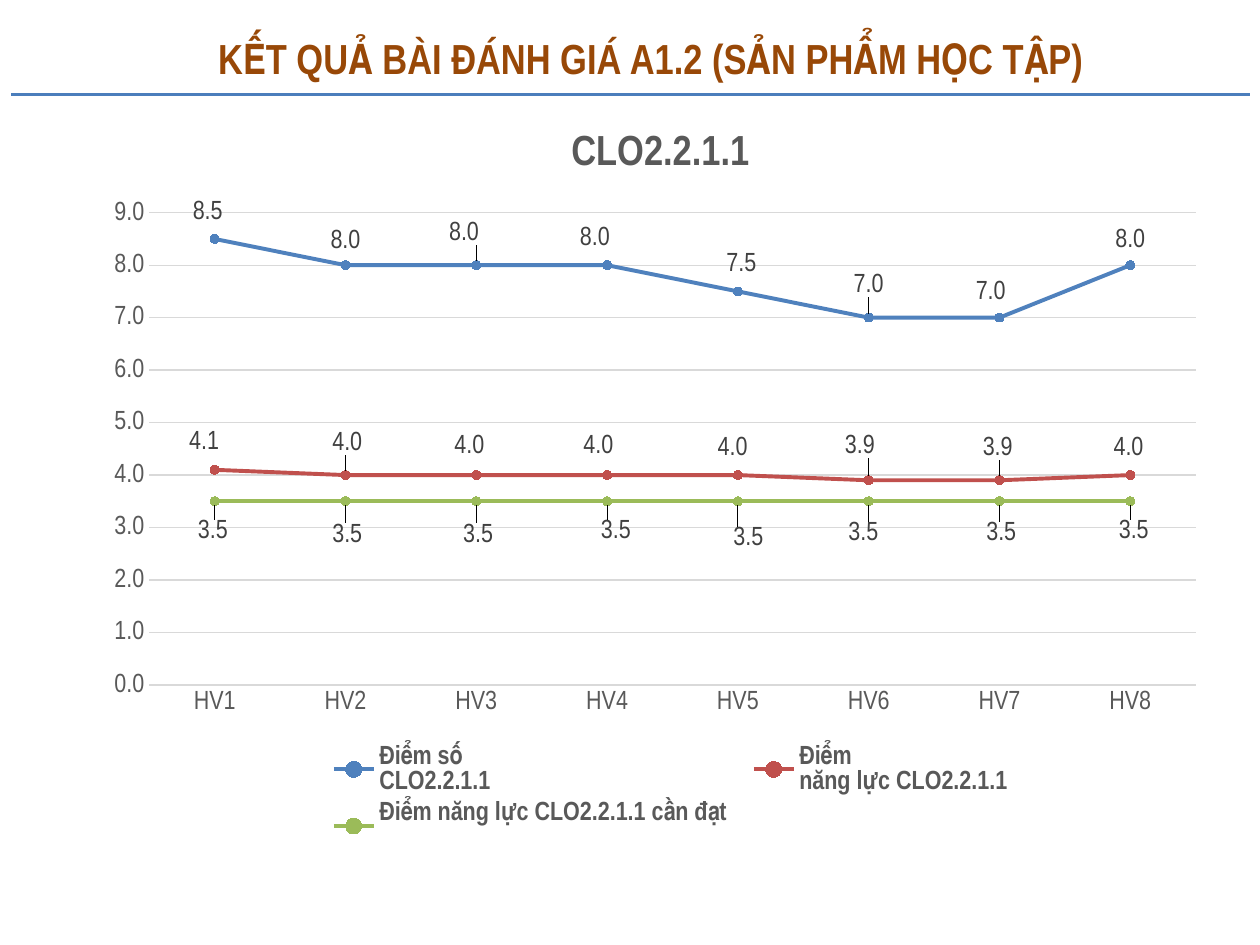
from dataclasses import dataclass

from lxml import etree
from pptx import Presentation
from pptx.chart.data import CategoryChartData
from pptx.dml.color import RGBColor
from pptx.enum import chart as ch, shapes, text
from pptx.oxml.ns import qn
from pptx.util import Pt

FONT = "Arial Narrow"
COLORS = {
    "heading": "984807", "rule": "4B7EBC", "grid": "D9D9D9", "axis": "595959",
    "label": "404040", "score": "4F81BD", "ability": "C0504D", "target": "9BBB59",
}
LEARNERS = [f"HV{n}" for n in range(1, 9)]
CHART_WIDTH, CHART_HEIGHT = 643.7, 419
ABOVE, BELOW = ch.XL_LABEL_POSITION.ABOVE, ch.XL_LABEL_POSITION.BELOW


@dataclass(frozen=True)
class Measure:
    name: str
    color: str
    values: list[float]
    label_side: ch.XL_LABEL_POSITION
    nudges: list[tuple[float, float]]  # label shifts in points


MEASURES = [
    Measure("Điểm số \nCLO2.2.1.1", "score", [8.5, 8, 8, 8, 7.5, 7, 7, 8], ABOVE,
            [(-4, -3), (0, -1), (-7, -6), (-7, -3), (2, -3), (0, -6), (-5, -2), (0, -2)]),
    Measure("Điểm \nnăng lực CLO2.2.1.1", "ability", [4.1, 4, 4, 4, 4, 3.9, 3.9, 4], ABOVE,
            [(-6, -3), (1, -6), (-4, -4), (-5, -4), (-3, -3), (-5, -7), (-1, -6), (-1, -3)]),
    Measure("Điểm năng lực CLO2.2.1.1 cần đạt", "target", [3.5] * 8, BELOW,
            [(-1, 5), (1, 7), (1, 7), (5, 5), (6, 9), (-3, 6), (1, 6), (2, 5)]),
]


def rgb(key: str) -> RGBColor:
    return RGBColor.from_string(COLORS[key])


def style_font(font, size: float, color: str, bold: bool = False) -> None:
    font.name, font.size, font.bold = FONT, Pt(size), bold
    font.color.rgb = rgb(color)


def write(frame, content: str, *, size: float, color: str, bold: bool = False,
          align=text.PP_ALIGN.CENTER) -> None:
    paragraph = frame.paragraphs[0]
    paragraph.alignment = align
    run = paragraph.add_run()
    run.text = content
    style_font(run.font, size, color, bold)


def set_layout(parent, index: int, **values) -> None:
    """Give a chart part a manual layout, in fractions of the chart."""
    for old in parent.findall(qn("c:layout")):
        parent.remove(old)
    layout = etree.Element(qn("c:layout"))
    manual = etree.SubElement(layout, qn("c:manualLayout"))
    for tag, value in values.items():
        etree.SubElement(manual, qn(f"c:{tag}")).set("val", str(value))
    parent.insert(index, layout)


def add_heading(slide) -> None:
    rule = slide.shapes.add_connector(
        shapes.MSO_CONNECTOR.STRAIGHT, Pt(6.5), Pt(54), Pt(714.25), Pt(54))
    rule.line.color.rgb = rgb("rule")
    rule.line.width = Pt(2)
    etree.SubElement(rule._element.spPr, qn("a:effectLst"))

    heading = slide.shapes.add_textbox(Pt(23.75), Pt(8.65), Pt(696.25), Pt(48.25))
    heading.text_frame.word_wrap = True
    heading.text_frame.vertical_anchor = text.MSO_ANCHOR.MIDDLE
    write(heading.text_frame, "KẾT QUẢ BÀI ĐÁNH GIÁ A1.2 (SẢN PHẨM HỌC TẬP)",
          size=24, color="heading", bold=True)


def style_axes(chart) -> None:
    for axis in (chart.category_axis, chart.value_axis):
        axis.major_tick_mark = axis.minor_tick_mark = ch.XL_TICK_MARK.NONE
        style_font(axis.tick_labels.font, 15, "axis")
    scores = chart.value_axis
    scores.minimum_scale, scores.maximum_scale, scores.major_unit = 0, 9, 1
    scores.tick_labels.number_format = "0.0"
    scores.tick_labels.number_format_is_linked = False
    scores.format.line.fill.background()
    scores.has_major_gridlines = True
    for line in (chart.category_axis.format.line, scores.major_gridlines.format.line):
        line.color.rgb = rgb("grid")
        line.width = Pt(0.75)


def style_series(series, measure: Measure) -> None:
    series.smooth = False
    series.format.line.color.rgb = rgb(measure.color)
    series.format.line.width = Pt(2.25)
    marker = series.marker
    marker.style, marker.size = ch.XL_MARKER_STYLE.CIRCLE, 5
    marker.format.fill.solid()
    marker.format.fill.fore_color.rgb = rgb(measure.color)
    marker.format.line.color.rgb = rgb(measure.color)

    labels = series.data_labels
    labels.show_value = True
    labels.number_format, labels.number_format_is_linked = "0.0", False
    labels.position = measure.label_side
    style_font(labels.font, 15, "label")
    for number, (dx, dy) in enumerate(measure.nudges):
        label = series.points[number].data_label
        style_font(label.font, 15, "label")
        label.position = measure.label_side
        element = labels._element.findall(qn("c:dLbl"))[number]
        set_layout(element, 1, x=round(dx / CHART_WIDTH, 4), y=round(dy / CHART_HEIGHT, 4))


def add_score_chart(slide) -> None:
    data = CategoryChartData(number_format="0.0")
    data.categories = LEARNERS
    for measure in MEASURES:
        data.add_series(measure.name, measure.values)
    chart = slide.shapes.add_chart(
        ch.XL_CHART_TYPE.LINE_MARKERS, Pt(51.85), Pt(57.6),
        Pt(CHART_WIDTH), Pt(CHART_HEIGHT), data).chart
    chart.font.name, chart.font.size = FONT, Pt(10)
    chart.plots[0].vary_by_categories = False

    chart.has_title = True
    write(chart.chart_title.text_frame, "CLO2.2.1.1", size=24, color="axis", bold=True)
    set_layout(chart.chart_title._element, 1, xMode="edge", yMode="edge", x=0.42, y=0.03)

    chart.has_legend = True
    legend = chart.legend
    legend.position = ch.XL_LEGEND_POSITION.BOTTOM
    legend.include_in_layout = False
    style_font(legend.font, 15, "axis", bold=True)
    set_layout(legend._element, 1, xMode="edge", yMode="edge", x=0.2, y=0.87, w=0.63, h=0.14)

    style_axes(chart)
    for series, measure in zip(chart.plots[0].series, MEASURES):
        style_series(series, measure)
    plot_area = chart._chartSpace.chart.plotArea
    set_layout(plot_area, 0, layoutTarget="inner", xMode="edge", yMode="edge",
               x=0.052, y=0.153, w=0.929, h=0.645)


def main() -> None:
    deck = Presentation()
    deck.slide_width, deck.slide_height = Pt(720), Pt(540)
    slide = deck.slides.add_slide(deck.slide_layouts[6])
    add_heading(slide)
    add_score_chart(slide)
    deck.save("out.pptx")


if __name__ == "__main__":
    main()
